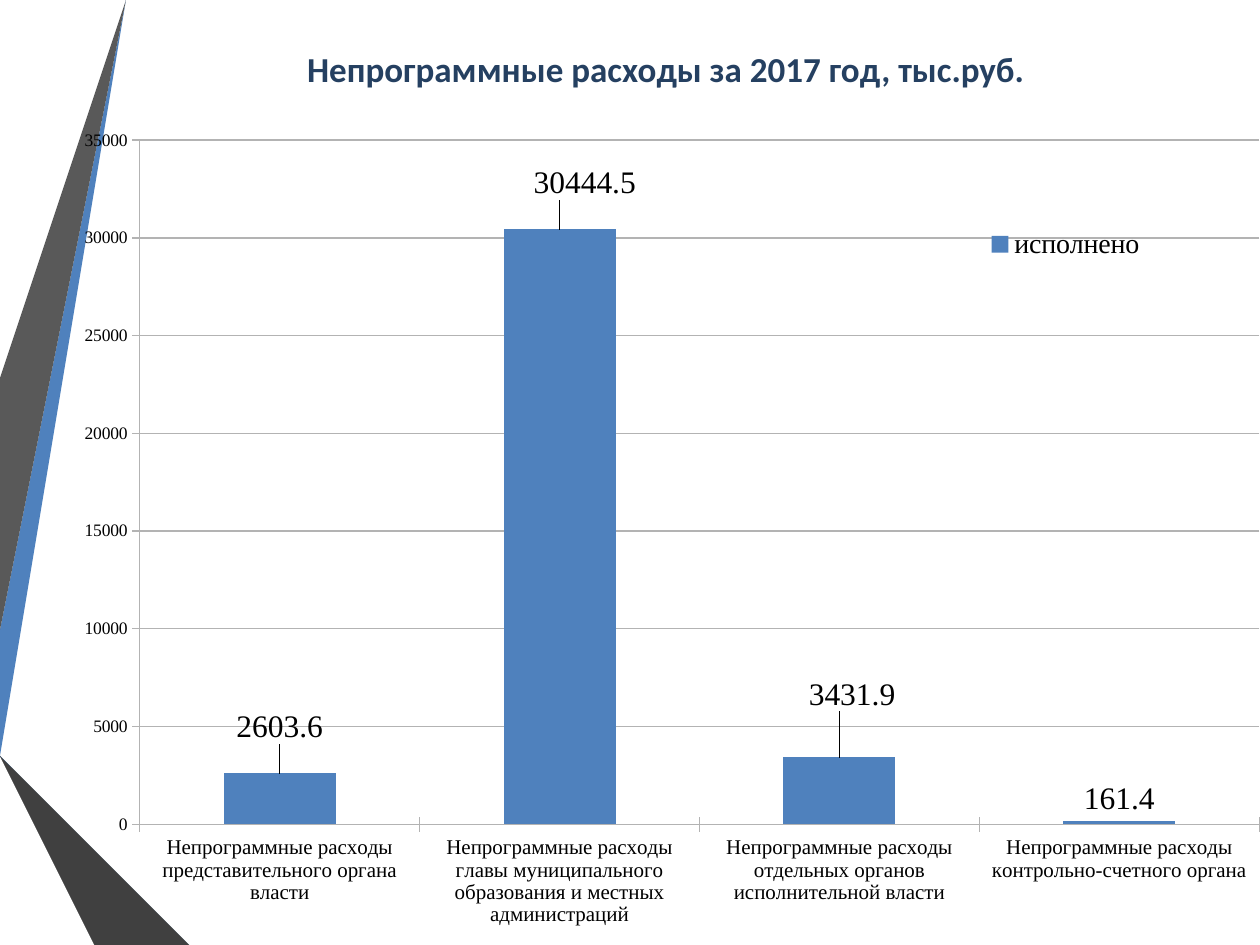
"""Build a slide with a column chart of non-programme spending."""
from lxml import etree
from pptx import Presentation
from pptx.chart.data import CategoryChartData
from pptx.dml.color import RGBColor
from pptx.enum import chart as ch, text
from pptx.oxml import ns
from pptx.util import Inches, Pt

COLORS = {
    "blue": "4F81BD", "grey": "595959", "black": "262626", "navy": "254061",
    "steel": "376092", "charcoal": "404040", "grid": "B3B3B3", "text": "000000",
}
SERIF = "Times New Roman"
RIBBONS = [
    ("blue", [(0, 5.44), (0, 5.75), (0.22, 5.79), (1.17, 0), (0.89, 0)]),
    ("grey", [(0.83, 0), (0.55, 0), (0, 3.36), (0, 5.06)]),
    ("black", [(0, 6.19), (0, 6.21), (0.93, 7.5), (0.99, 7.5)]),
    ("navy", [(0, 5.79), (0, 5.8), (1.56, 7.5), (1.63, 7.5)]),
    ("steel", [(0, 5.79), (1.63, 7.5), (2.33, 7.5), (0.22, 5.79), (0, 5.75)]),
    ("charcoal", [(0, 6.19), (0.99, 7.5), (1.51, 7.5), (0, 5.86)]),
]
SPENDING = {
    "Непрограммные расходы представительного органа власти": 2603.6,
    "Непрограммные расходы главы муниципального образования "
    "и местных администраций": 30444.5,
    "Непрограммные расходы отдельных органов исполнительной власти": 3431.9,
    "Непрограммные расходы контрольно-счетного органа": 161.4,
}
LABEL_SHIFTS = [(0, -0.03), (0.02, -0.03), (0.01, -0.05)]


def rgb(name):
    """Return a palette colour."""
    return RGBColor.from_string(COLORS[name])


def style_font(font, size, name=SERIF, color="text", bold=False):
    """Set the format of a font."""
    font.size, font.name, font.bold = Pt(size), name, bold
    font.color.rgb = rgb(color)


def write_text(tf, content, align=text.PP_ALIGN.CENTER, **fmt):
    """Write one formatted paragraph into a text frame."""
    p = tf.paragraphs[0]
    p.alignment = align
    r = p.add_run()
    r.text = content
    style_font(r.font, **fmt)


def add_title(s, content):
    """Place and fill the title placeholder."""
    sp = s.shapes.title
    sp.left, sp.top = Inches(1.07), Inches(0)
    sp.width, sp.height = Inches(8.43), Inches(1.09)
    tf = sp.text_frame
    tf.vertical_anchor = text.MSO_ANCHOR.MIDDLE
    write_text(tf, content, size=20, name="Calibri", color="navy", bold=True)


def add_ribbon(s, color, points):
    """Draw a closed filled outline."""
    fb = s.shapes.build_freeform(*points[0], scale=Inches(1))
    fb.add_line_segments(points[1:], close=True)
    sp = fb.convert_to_shape()
    sp.shadow.inherit = False
    sp.fill.solid()
    sp.fill.fore_color.rgb = rgb(color)
    sp.line.fill.background()


def set_layout(parent, after, **values):
    """Give a chart part a manual layout, put after the named child."""
    for old in parent.findall(ns.qn("c:layout")):
        parent.remove(old)
    layout = etree.Element(ns.qn("c:layout"))
    manual = etree.SubElement(layout, ns.qn("c:manualLayout"))
    for tag, value in values.items():
        etree.SubElement(manual, ns.qn(f"c:{tag}")).set("val", str(value))
    if after:
        parent.find(ns.qn(after)).addnext(layout)
    else:
        parent.insert(0, layout)


def style_axis(axis, size):
    """Format an axis and its tick labels."""
    style_font(axis.tick_labels.font, size)
    axis.major_tick_mark = ch.XL_TICK_MARK.CROSS
    axis.minor_tick_mark = ch.XL_TICK_MARK.NONE
    axis.format.line.color.rgb = rgb("grid")


def style_labels(series):
    """Show the values and shift the labels of the first columns."""
    labels = series.data_labels
    labels.show_value = True
    labels.position = ch.XL_LABEL_POSITION.OUTSIDE_END
    style_font(labels.font, 18)
    for i, (x, y) in enumerate(LABEL_SHIFTS):
        label = series.points[i].data_label
        style_font(label.font, 18)
        label.position = ch.XL_LABEL_POSITION.OUTSIDE_END
    for node, (x, y) in zip(series.data_labels._element.findall(ns.qn("c:dLbl")), LABEL_SHIFTS):
        set_layout(node, "c:idx", x=x, y=y)


def add_spending_chart(s):
    """Add the column chart."""
    data = CategoryChartData()
    data.categories = list(SPENDING)
    data.add_series("исполнено", list(SPENDING.values()))
    chart = s.shapes.add_chart(
        ch.XL_CHART_TYPE.COLUMN_CLUSTERED, Inches(0), Inches(0.94),
        Inches(10), Inches(6.41), data).chart
    style_font(chart.font, 18, name="Calibri")
    chart.has_title = False
    style_axis(chart.category_axis, 12)
    axis = chart.value_axis
    style_axis(axis, 10)
    axis.minimum_scale, axis.maximum_scale, axis.major_unit = 0, 35000, 5000
    axis.has_major_gridlines = True
    axis.major_gridlines.format.line.color.rgb = rgb("grid")

    plot = chart.plots[0]
    plot.gap_width = 150
    plot.vary_by_categories = False
    series = plot.series[0]
    series.format.fill.solid()
    series.format.fill.fore_color.rgb = rgb("blue")
    style_labels(series)

    chart.has_legend = True
    legend = chart.legend
    legend.position = ch.XL_LEGEND_POSITION.RIGHT
    legend.include_in_layout = False
    style_font(legend.font, 16)
    set_layout(legend._element, "c:legendPos", xMode="edge", yMode="edge", x=0.78, y=0.13)
    area = chart._chartSpace.find(".//" + ns.qn("c:plotArea"))
    set_layout(area, None, layoutTarget="inner", xMode="edge", yMode="edge",
               x=0.111, y=0.027, w=0.889, h=0.85)


def main():
    """Build and save the presentation."""
    prs = Presentation()
    prs.slide_width, prs.slide_height = Inches(10), Inches(7.5)
    s = prs.slides.add_slide(prs.slide_layouts[5])
    for color, points in RIBBONS:
        add_ribbon(s, color, points)
    add_title(s, "Непрограммные расходы за 2017 год, тыс.руб.")
    add_spending_chart(s)
    prs.save("out.pptx")


if __name__ == "__main__":
    main()
